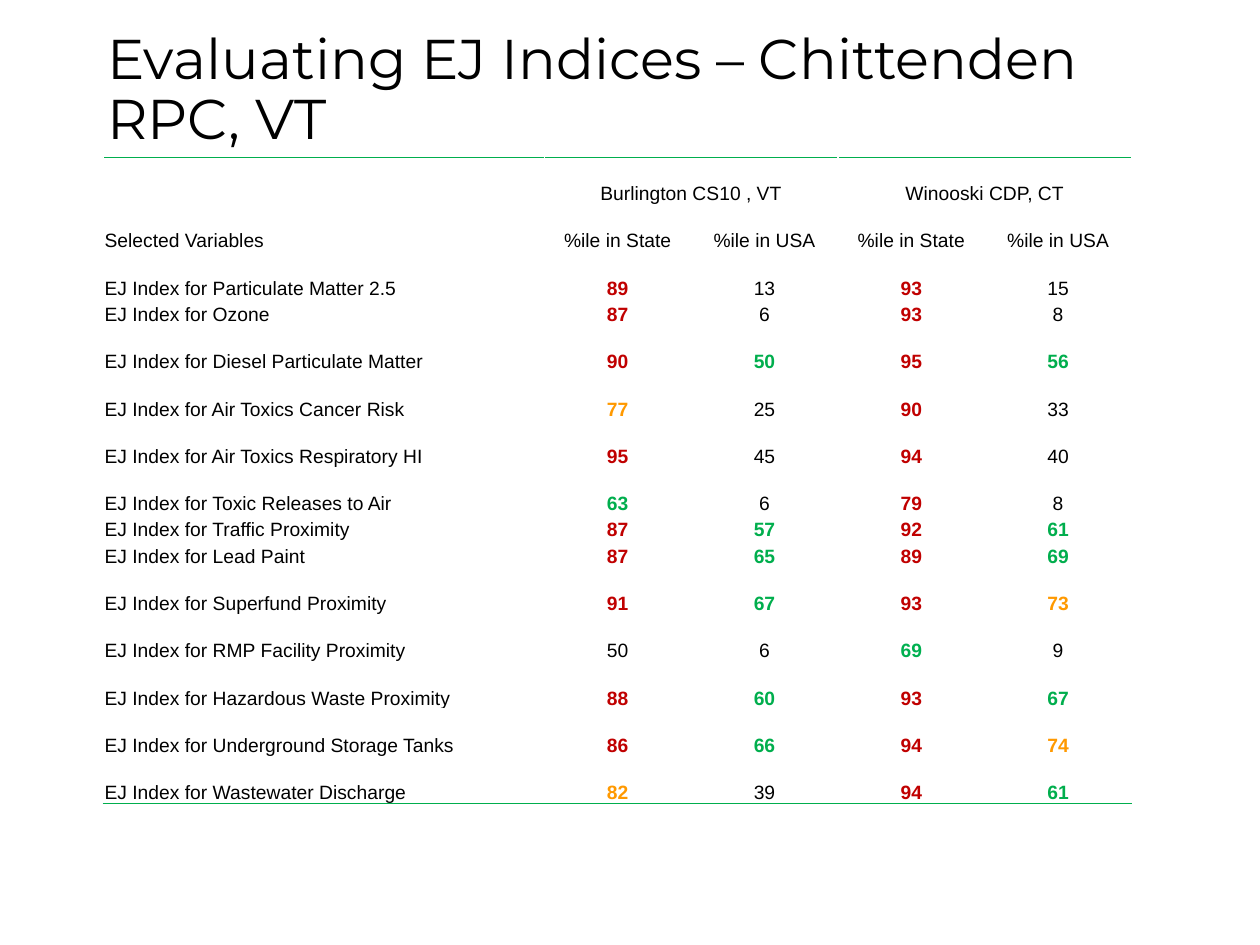
from lxml import etree
from pptx import Presentation
from pptx.dml.color import RGBColor
from pptx.enum.text import MSO_ANCHOR, PP_ALIGN
from pptx.oxml.ns import qn
from pptx.util import Inches, Pt

COLORS = {"text": "000000", "high": "C00000", "medium": "FF9900",
          "low": "00AE4D", "green": "00B050", "rule": "00AE4D"}
# One letter per value: h high, m medium, l low, g green, - plain
LEVELS = {"h": "high", "m": "medium", "l": "low", "g": "green", "-": "text"}

PLACES = ["Burlington CS10 , VT", "Winooski CDP, CT"]
HEADINGS = ["Selected Variables"] + ["%ile in State", "%ile in USA"] * 2
INDICES = [
    ("Particulate Matter 2.5", (89, 13, 93, 15), "h-h-"),
    ("Ozone", (87, 6, 93, 8), "h-h-"),
    ("Diesel Particulate Matter", (90, 50, 95, 56), "hlhl"),
    ("Air Toxics Cancer Risk", (77, 25, 90, 33), "m-h-"),
    ("Air Toxics Respiratory HI", (95, 45, 94, 40), "h-h-"),
    ("Toxic Releases to Air", (63, 6, 79, 8), "l-h-"),
    ("Traffic Proximity", (87, 57, 92, 61), "hlhl"),
    ("Lead Paint", (87, 65, 89, 69), "hlhl"),
    ("Superfund Proximity", (91, 67, 93, 73), "hlhm"),
    ("RMP Facility Proximity", (50, 6, 69, 9), "--g-"),
    ("Hazardous Waste Proximity", (88, 60, 93, 67), "hlhl"),
    ("Underground Storage Tanks", (86, 66, 94, 74), "hlhm"),
    ("Wastewater Discharge", (82, 39, 94, 61), "m-hl"),
]
SHORT_ROWS = {3, 8, 9}
SHORT_HEIGHT = 0.21
NAME_WIDTH = 3.5


class SlideBuilder:
    title_font = "Montserrat"
    body_font = "Arial"

    def __init__(self, slide):
        self.s = slide

    def style(self, p, font, size, color="text", bold=False):
        p.font.name = font
        p.font.size = Pt(size)
        p.font.bold = bold
        p.font.color.rgb = RGBColor.from_string(COLORS[color])

    def title(self, text, left, top, width, height):
        sp = self.s.shapes.title
        sp.left, sp.top = Inches(left), Inches(top)
        sp.width, sp.height = Inches(width), Inches(height)
        tf = sp.text_frame
        tf.word_wrap = True
        tf.vertical_anchor = MSO_ANCHOR.MIDDLE
        p = tf.paragraphs[0]
        p.text = text
        p.alignment = PP_ALIGN.LEFT
        p.line_spacing = 0.9
        self.style(p, self.title_font, 32)

    def table(self, rows, cols, left, top, width, height):
        """Add a plain table with a wide name column and a few short rows."""
        table = self.s.shapes.add_table(
            rows, cols, Inches(left), Inches(top), Inches(width), Inches(height)).table
        table.first_row = table.horz_banding = False
        value_width = (width - NAME_WIDTH) / (cols - 1)
        for i, col in enumerate(table.columns):
            col.width = Inches(value_width if i else NAME_WIDTH)
        tall = (height - SHORT_HEIGHT * len(SHORT_ROWS)) / (rows - len(SHORT_ROWS))
        for i, row in enumerate(table.rows):
            row.height = Inches(SHORT_HEIGHT if i in SHORT_ROWS else tall)
            for cell in row.cells:
                cell.fill.background()
                cell.vertical_anchor = MSO_ANCHOR.BOTTOM
                cell.margin_left = cell.margin_right = cell.margin_top = Inches(0.01)
                cell.margin_bottom = 0
        return table

    def cell(self, cell, text, color="text", centered=True):
        p = cell.text_frame.paragraphs[0]
        p.text = text
        p.alignment = PP_ALIGN.CENTER if centered else PP_ALIGN.LEFT
        self.style(p, self.body_font, 11, color, bold=color != "text")

    def border(self, cell, side):
        """Rule one side of a cell: "T" for top, "B" for bottom."""
        ln = etree.Element(qn(f"a:ln{side}"), w=str(Pt(1)))
        fill = etree.SubElement(ln, qn("a:solidFill"))
        etree.SubElement(fill, qn("a:srgbClr"), val=COLORS["rule"])
        cell._tc.get_or_add_tcPr().insert(0, ln)


def main():
    prs = Presentation()
    prs.slide_width, prs.slide_height = Inches(10), Inches(7.5)
    builder = SlideBuilder(prs.slides.add_slide(prs.slide_layouts[5]))
    builder.title("Evaluating EJ Indices – Chittenden RPC, VT", 0.75, 0, 8.62, 1.45)

    last = len(INDICES) + 1
    table = builder.table(last + 1, len(HEADINGS), 0.82, 1.25, 8.16, 5.13)
    for i, place in enumerate(PLACES):
        first = table.cell(0, 1 + 2 * i)
        first.merge(table.cell(0, 2 + 2 * i))
        builder.cell(first, place)
    for c, heading in enumerate(HEADINGS):
        builder.cell(table.cell(1, c), heading, centered=c > 0)
        builder.border(table.cell(0, c), "T")
        builder.border(table.cell(last, c), "B")
    for r, (name, values, levels) in enumerate(INDICES, start=2):
        builder.cell(table.cell(r, 0), f"EJ Index for {name}", centered=False)
        for c, (value, level) in enumerate(zip(values, levels), start=1):
            builder.cell(table.cell(r, c), str(value), LEVELS[level])

    prs.save("out.pptx")


if __name__ == "__main__":
    main()
